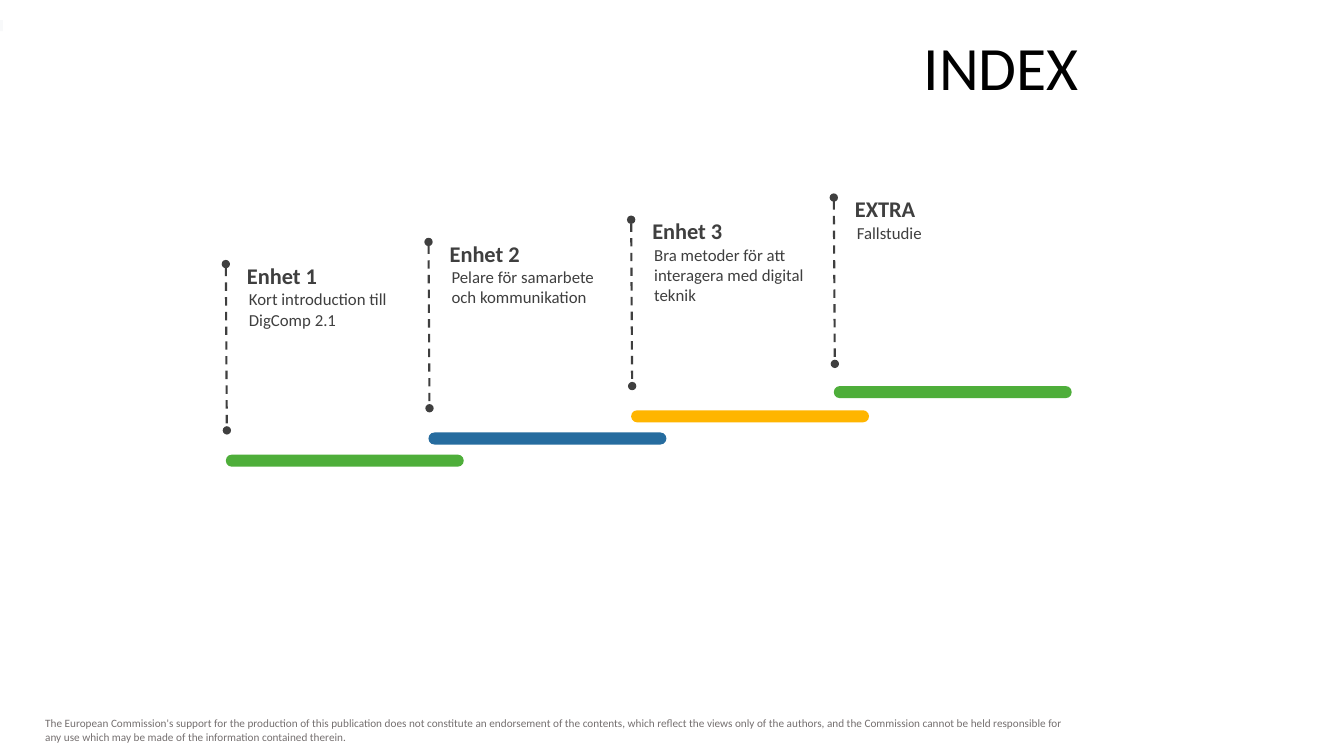
from lxml import etree
from pptx import Presentation
from pptx.dml.color import RGBColor
from pptx.enum.dml import MSO_LINE_DASH_STYLE as DASH
from pptx.enum.shapes import MSO_CONNECTOR as CONN, MSO_SHAPE as SHAPE
from pptx.enum.text import MSO_ANCHOR as ANCHOR, MSO_AUTO_SIZE as AUTO, PP_ALIGN as ALIGN
from pptx.oxml.ns import qn
from pptx.util import Inches, Pt

BLACK = RGBColor(0x00, 0x00, 0x00)
DARK = RGBColor(0x3F, 0x3F, 0x3F)
GREY = RGBColor(0x75, 0x70, 0x70)
PALE = RGBColor(0xF8, 0xF9, 0xFA)
GREEN = RGBColor(0x4E, 0xAE, 0x3A)
BLUE = RGBColor(0x26, 0x6C, 0x9F)
YELLOW = RGBColor(0xFF, 0xB5, 0x00)

DISCLAIMER = (
    "The European Commission's support for the production of this publication does not "
    "constitute an endorsement of the contents, which reflect the views only of the authors, "
    "and the Commission cannot be held responsible for any use which may be made of the "
    "information contained therein."
)
STEPS = [
    ("Enhet 1", "Kort introduction till DigComp 2.1", 0.5, 4.51, GREEN),
    ("Enhet 2", "Pelare för samarbete och kommunikation", 0.5, 4.29, BLUE),
    ("Enhet 3", "Bra metoder för att interagera med digital teknik", 0.71, 4.07, YELLOW),
    ("EXTRA", "Fallstudie", 0.3, 3.83, GREEN),
]


class SlideBuilder:
    """Draws styled elements on the current slide."""

    font = "Calibri"

    def __init__(self, prs):
        self.s = prs.slides.add_slide(prs.slide_layouts[6])

    def text(self, text, box, size, color, bold=False, inset=0.1, parent=None, frame=None, para=None):
        shapes = (parent or self.s).shapes
        tf = shapes.add_textbox(*map(Inches, box)).text_frame
        layout = {"word_wrap": True, "auto_size": AUTO.SHAPE_TO_FIT_TEXT,
                  "margin_left": Inches(inset), "margin_right": Inches(inset)}
        for name, value in {**layout, **(frame or {})}.items():
            setattr(tf, name, value)
        p = tf.paragraphs[0]
        for name, value in (para or {}).items():
            setattr(p, name, value)
        r = p.add_run()
        r.text = text
        for name, value in {"name": self.font, "size": Pt(size), "bold": bold}.items():
            setattr(r.font, name, value)
        r.font.color.rgb = color

    def block(self, kind, box, color):
        sp = self.s.shapes.add_shape(kind, *map(Inches, box))
        sp.shadow.inherit = False
        sp.fill.solid()
        sp.fill.fore_color.rgb = color
        sp.line.fill.background()
        return sp

    def bar(self, box, color):
        self.block(SHAPE.ROUNDED_RECTANGLE, box, color).adjustments[0] = 0.5

    def pin(self, x1, y1, x2, y2):
        cxn = self.s.shapes.add_connector(CONN.STRAIGHT, *map(Inches, (x1, y1, x2, y2)))
        cxn.line.color.rgb = DARK
        for name, value in {"width": Pt(1.5), "dash_style": DASH.DASH}.items():
            setattr(cxn.line, name, value)
        ln = cxn.line._get_or_add_ln()
        for end in ("a:headEnd", "a:tailEnd"):
            etree.SubElement(ln, qn(end), type="oval")
        etree.SubElement(cxn._element.spPr, qn("a:effectLst"))

    def step(self, x, y, title, detail, detail_height):
        group = self.s.shapes.add_group_shape()
        self.text(detail, (x + 0.13, y + 0.2, 1.72, detail_height), 12, DARK, parent=group)
        self.text(title, (x + 0.09, y - 0.07, 1.73, 0.37), 16, DARK, bold=True, inset=0.12, parent=group)
        self.pin(x, y, x + 0.01, y + 1.65)


def main():
    prs = Presentation()
    prs.slide_width, prs.slide_height = Inches(13.33), Inches(7.5)
    b = SlideBuilder(prs)
    b.text(DISCLAIMER, (0.35, 7.06, 10.46, 0.37), 8, GREY)
    b.text("INDEX", (4.43, 0.3, 6.37, 0.79), 44, BLACK,
           frame={"auto_size": AUTO.NONE, "vertical_anchor": ANCHOR.MIDDLE},
           para={"alignment": ALIGN.RIGHT, "line_spacing": 0.9})
    for i, (title, detail, detail_height, bar_top, color) in enumerate(STEPS):
        x = 2.24 + 2.01 * i
        b.bar((x, bar_top, 2.36, 0.12), color)
        b.step(x, 2.62 - 0.22 * i, title, detail, detail_height)
    b.block(SHAPE.RECTANGLE, (0, 0.2, 0.03, 0.11), PALE)
    prs.save("out.pptx")


if __name__ == "__main__":
    main()
